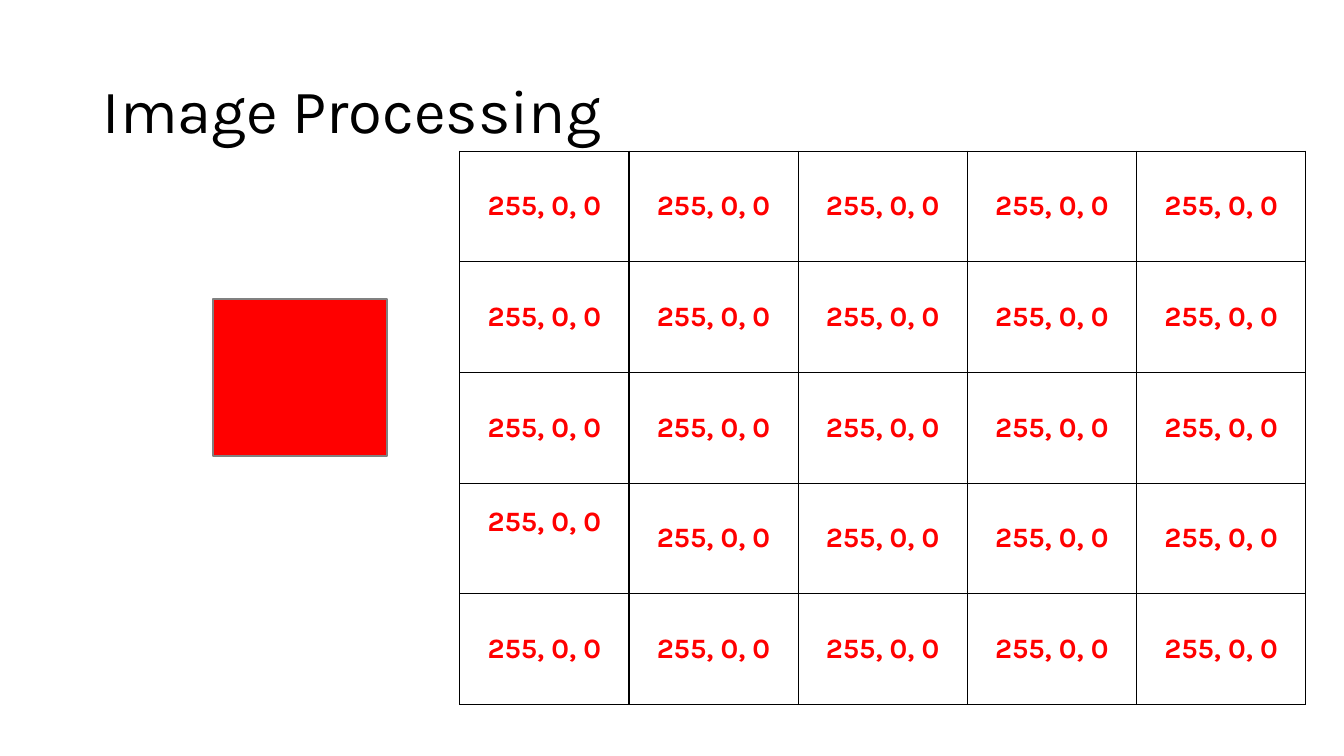
from lxml import etree
from pptx import Presentation
from pptx.dml.color import RGBColor
from pptx.enum.shapes import MSO_SHAPE
from pptx.enum.text import MSO_ANCHOR, PP_ALIGN
from pptx.oxml.ns import qn
from pptx.util import Inches, Pt

RECT = MSO_SHAPE.RECTANGLE
MIDDLE = MSO_ANCHOR.MIDDLE
LEFT, CENTER = PP_ALIGN.LEFT, PP_ALIGN.CENTER
BLACK = RGBColor(0x00, 0x00, 0x00)
RED = RGBColor(0xFF, 0x00, 0x00)
GRAY = RGBColor(0x80, 0x80, 0x80)
FONT = "Karla"
SIDE = 5
PIXEL = "255, 0, 0"
RAISED = (3, 0)


def style(para, size, color, bold, align):
    para.alignment = align
    for run in para.runs:
        font = run.font
        font.name = FONT
        font.size = Pt(size)
        font.bold = bold
        font.color.rgb = color


def add_title(slide, box, text):
    title = slide.shapes.title
    title.left, title.top, title.width, title.height = map(Inches, box)
    frame = title.text_frame
    frame.text = text
    frame.vertical_anchor = MIDDLE
    para = frame.paragraphs[0]
    para.line_spacing = 0.9
    style(para, 44, BLACK, False, LEFT)


def add_border(cell):
    props = cell._tc.get_or_add_tcPr()
    for index, side in enumerate(("lnL", "lnR", "lnT", "lnB")):
        line = etree.Element(qn(f"a:{side}"), w=str(Pt(1)))
        fill = etree.SubElement(line, qn("a:solidFill"))
        etree.SubElement(fill, qn("a:srgbClr"), val=str(BLACK))
        props.insert(index, line)


def add_grid(slide, box):
    left, top, width, height = map(Inches, box)
    table = slide.shapes.add_table(SIDE, SIDE, left, top, width, height).table
    table.first_row = False
    table.horz_banding = False
    for row in range(SIDE):
        for col in range(SIDE):
            cell = table.cell(row, col)
            cell.text_frame.text = PIXEL
            cell.vertical_anchor = MIDDLE
            cell.fill.background()
            style(cell.text_frame.paragraphs[0], 20, RED, True, CENTER)
            add_border(cell)
    table.cell(*RAISED).margin_bottom = Inches(0.37)


def add_swatch(slide, box):
    swatch = slide.shapes.add_shape(RECT, *map(Inches, box))
    swatch.shadow.inherit = False
    swatch.fill.solid()
    swatch.fill.fore_color.rgb = RED
    swatch.line.color.rgb = GRAY
    swatch.line.width = Pt(1.5)


def main():
    deck = Presentation()
    deck.slide_width = Inches(13.33)
    deck.slide_height = Inches(7.5)
    slide = deck.slides.add_slide(deck.slide_layouts[5])
    add_title(slide, (0.92, 0.4, 11.5, 1.45), "Image Processing")
    add_grid(slide, (4.56, 1.5, 8.39, 5.49))
    add_swatch(slide, (2.11, 2.97, 1.73, 1.55))
    deck.save("out.pptx")


if __name__ == "__main__":
    main()
